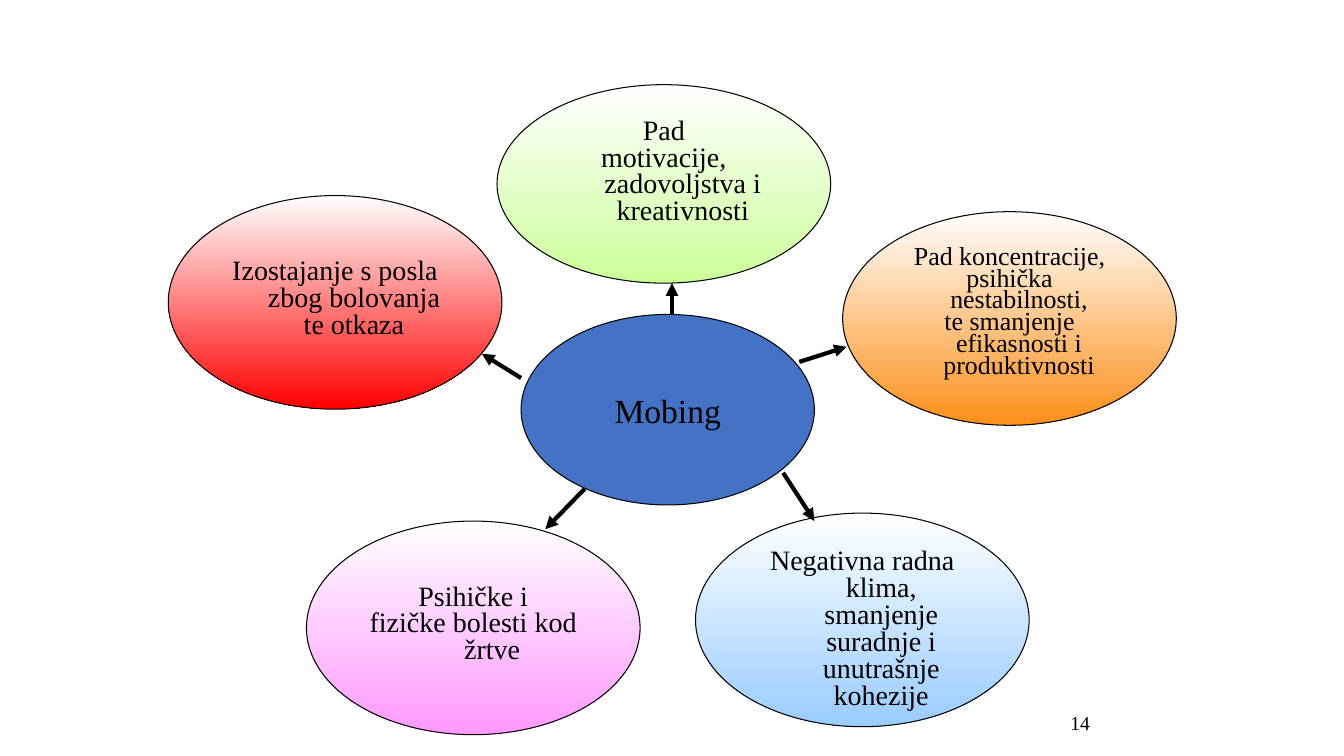
from pptx import Presentation
from pptx import util as u
from pptx.dml.color import RGBColor
from pptx.enum import shapes, text
from pptx.oxml import ns, xmlchemy

BUBBLE_WIDTH = 238.3
BUBBLE_HEIGHT = 152.6

# left, top, height, gradient end, text size, line spacing, indent, top inset, paragraphs
BUBBLES = [
    (601.9, 151.2, BUBBLE_HEIGHT, "FB8F19", 18.5, 0.7, 13.5, 3.6,
     ["Pad koncentracije,", "psihička nestabilnosti,",
      "te smanjenje efikasnosti i produktivnosti"]),
    (355, 60.5, 141.8, "CCFF99", 20, 0.8, 27, 3.6,
     ["Pad", "motivacije, zadovoljstva i kreativnosti"]),
    (496.8, 366.5, BUBBLE_HEIGHT, "99CCFF", 20, 0.8, 27, 3.6,
     ["Negativna radna klima, smanjenje suradnje i unutrašnje kohezije"]),
    (218.9, 372.2, BUBBLE_HEIGHT, "FF99FF", 20, 0.8, 27, 23,
     ["Psihičke i", "fizičke bolesti kod žrtve"]),
    (120.2, 139.7, BUBBLE_HEIGHT, "FF0000", 20, 0.8, 27, 23,
     ["Izostajanje s posla zbog bolovanja te otkaza"]),
]

ARROWS = [
    (480, 224.6, 480, 202.3),
    (571, 258.5, 604.8, 247.7),
    (559.4, 337.7, 581.8, 372.2),
    (417.6, 349.2, 389.5, 378),
    (372.2, 270, 344.2, 252.7),
]


def color(hex_string):
    return RGBColor.from_string(hex_string)


class Diagram:
    font = "Times New Roman"
    ink = "000000"

    def __init__(self, slide):
        self.slide = slide

    def set_text(self, shape, lines, size, align, spacing=1.0, indent=0):
        """Fill the shape with one paragraph per line, with hanging indents."""
        frame = shape.text_frame
        frame.text = "\n".join(lines)
        for paragraph in frame.paragraphs:
            paragraph.alignment = align
            paragraph.line_spacing = spacing
            if indent:
                properties = paragraph._p.get_or_add_pPr()
                properties.set("marL", str(int(u.Pt(indent))))
                properties.set("indent", str(-int(u.Pt(indent))))
            for run in paragraph.runs:
                run.font.name = self.font
                run.font.size = u.Pt(size)
                run.font.color.rgb = color(self.ink)

    def ellipse(self, left, top, width, height):
        shape = self.slide.shapes.add_shape(
            shapes.MSO_SHAPE.OVAL, u.Pt(left), u.Pt(top), u.Pt(width), u.Pt(height))
        shape.shadow.inherit = False
        shape.line.color.rgb = color(self.ink)
        shape.line.width = u.Pt(0.75)
        return shape

    def hub(self, left, top, width, height, fill, label):
        shape = self.ellipse(left, top, width, height)
        shape.fill.solid()
        shape.fill.fore_color.rgb = color(fill)
        shape.text_frame.word_wrap = False
        shape.text_frame.vertical_anchor = text.MSO_ANCHOR.MIDDLE
        self.set_text(shape, [label], 24, text.PP_ALIGN.CENTER)

    def bubble(self, left, top, height, fill, size, spacing, indent, inset, lines):
        shape = self.ellipse(left, top, BUBBLE_WIDTH, height)
        shape.fill.gradient()
        shape.fill.gradient_angle = 270
        for stop, position, shade in zip(shape.fill.gradient_stops, (0, 1), ("FFFFFF", fill)):
            stop.position = position
            stop.color.rgb = color(shade)
        frame = shape.text_frame
        frame.word_wrap = True
        frame.vertical_anchor = text.MSO_ANCHOR.TOP
        frame.margin_top = u.Pt(inset)
        self.set_text(shape, lines, size, text.PP_ALIGN.CENTER, spacing, indent)

    def arrow(self, *ends):
        connector = self.slide.shapes.add_connector(
            shapes.MSO_CONNECTOR.STRAIGHT, *(u.Pt(end) for end in ends))
        connector.line.color.rgb = color(self.ink)
        connector.line.width = u.Pt(3)
        head = xmlchemy.OxmlElement("a:tailEnd")
        head.set("type", "triangle")
        properties = connector._element.find(ns.qn("p:spPr"))
        properties.find(ns.qn("a:ln")).append(head)
        properties.append(xmlchemy.OxmlElement("a:effectLst"))

    def page_number(self, left, top, width, height, number):
        box = self.slide.shapes.add_textbox(
            u.Pt(left), u.Pt(top), u.Pt(width), u.Pt(height))
        box.text_frame.word_wrap = True
        box.text_frame.vertical_anchor = text.MSO_ANCHOR.MIDDLE
        self.set_text(box, [number], 14, text.PP_ALIGN.RIGHT)


def main():
    presentation = Presentation()
    presentation.slide_width = u.Pt(960)
    presentation.slide_height = u.Pt(540)
    diagram = Diagram(presentation.slides.add_slide(presentation.slide_layouts[6]))
    diagram.page_number(635.8, 498.2, 149.8, 36, "14")
    diagram.hub(372.2, 224.6, 209.5, 136.1, "4472C4", "Mobing")
    for bubble in BUBBLES:
        diagram.bubble(*bubble)
    for arrow in ARROWS:
        diagram.arrow(*arrow)
    presentation.save("out.pptx")


if __name__ == "__main__":
    main()
